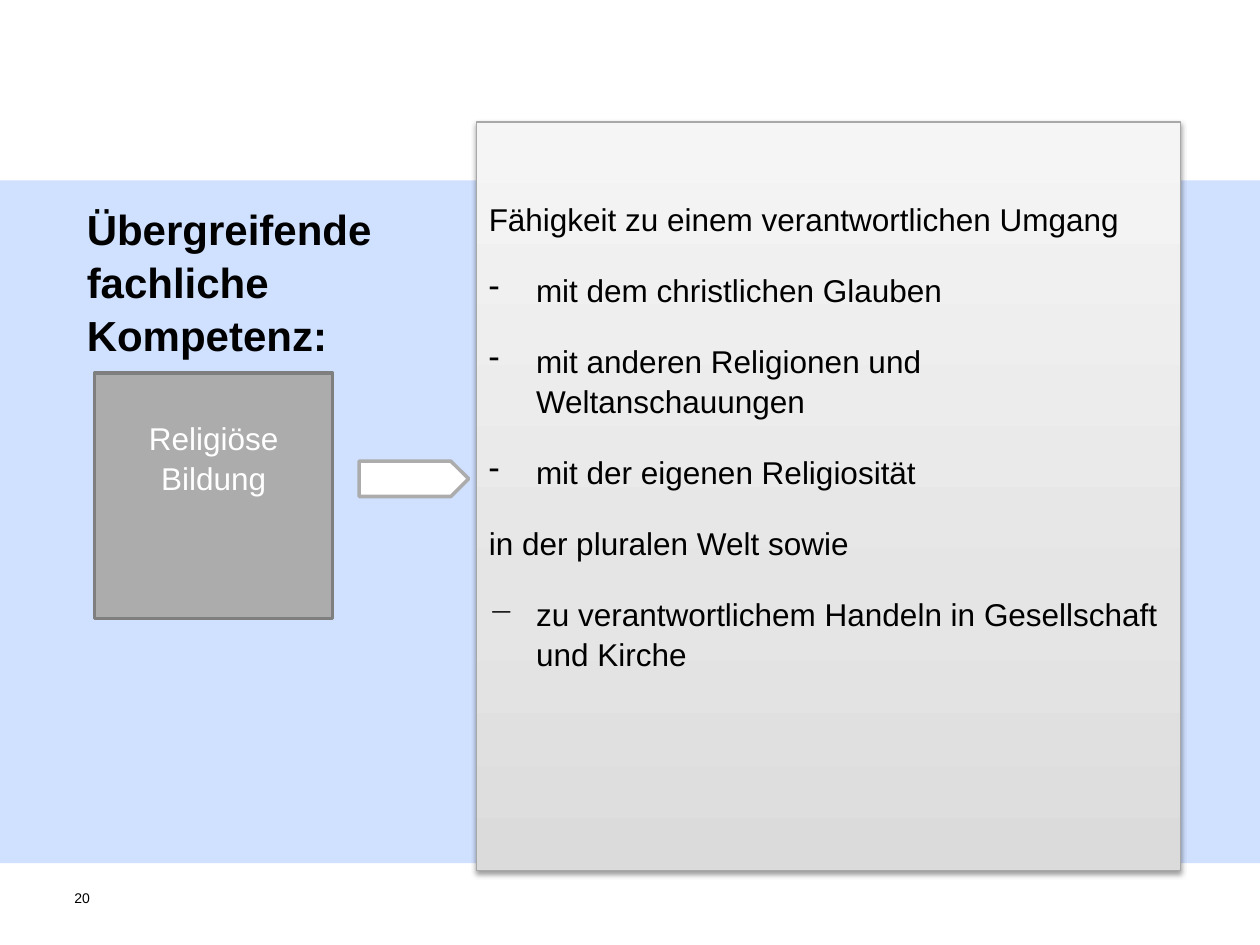
"""Build the slide on the overarching competence of religious education."""
from lxml import etree
from copy import deepcopy
from pptx import Presentation
from pptx.dml.color import RGBColor
from pptx.enum.shapes import MSO_SHAPE
from pptx.enum.text import MSO_ANCHOR, PP_ALIGN
from pptx.oxml.ns import qn
from pptx.util import Pt

RECT, PENTAGON = MSO_SHAPE.RECTANGLE, MSO_SHAPE.PENTAGON
TOP, LEFT, CENTER = MSO_ANCHOR.TOP, PP_ALIGN.LEFT, PP_ALIGN.CENTER

TITLE = [("", "Übergreifende fachliche Kompetenz:")]
TOPIC = [("", "Religiöse Bildung")]
ABILITIES = [
    ("", "Fähigkeit zu einem verantwortlichen Umgang"),
    ("-", "mit dem christlichen Glauben"),
    ("-", "mit anderen Religionen und Weltanschauungen"),
    ("-", "mit der eigenen Religiosität"),
    ("", "in der pluralen Welt sowie"),
    ("−", "zu verantwortlichem Handeln in Gesellschaft und Kirche"),
]
NUMBER = [("", "20")]

THEME = {
    "font": "Arial", "title": 24, "body": 18, "number": 8,
    "text": "000000", "inverse": "FFFFFF",
    "band": "6699FF", "band_alpha": 30,
    "topic": "ACACAC", "topic_line": "7F7F7F",
    "arrow": "FFFFFF", "arrow_line": "ACACAC",
    "panel": [(0, "DBDBDB"), (0.35, "E5E5E5"), (1, "F5F5F5")],
    "panel_line": "A8A8A8", "shadow": "000000", "shadow_alpha": 38,
}
BOXES = {
    "band": (0, 103, 720, 390.2),
    "title": (42.5, 111.6, 215.3, 94.3),
    "topic": (54, 213.1, 136.1, 140.4),
    "panel": (272.2, 69.8, 402.5, 427.7),
    "arrow": (205.2, 263.5, 62.6, 20.2),
    "number": (42.5, 508.3, 23, 26.6),
}
INSETS = (7.2, 3.6, 7.2, 3.6)
LINE_SPACING = 1.05
BODY_LINE = 21.7
PARA_GAP = 18
INDENT = Pt(27)


def rgb(name):
    return RGBColor.from_string(THEME[name])


def place(name):
    return [Pt(v) for v in BOXES[name]]


def add_box(s, name, kind=RECT, line=0):
    sp = s.shapes.add_shape(kind, *place(name))
    sp.shadow.inherit = False
    if isinstance(THEME[name], str):
        sp.fill.solid()
        sp.fill.fore_color.rgb = rgb(name)
    if line:
        sp.line.color.rgb = rgb(name + "_line")
        sp.line.width = Pt(line)
    else:
        sp.line.fill.background()
    return sp


def set_alpha(color, percent):
    etree.SubElement(color, qn("a:alpha"), val=str(percent * 1000))


def set_gradient(sp, stops):
    sp.fill.gradient()
    sp.fill.gradient_angle = 90
    stop_list = sp._element.spPr.find(".//" + qn("a:gsLst"))
    stop_list.append(deepcopy(stop_list[0]))
    for stop, (position, color) in zip(sp.fill.gradient_stops, stops):
        stop.position = position
        stop.color.rgb = RGBColor.from_string(color)


def set_shadow(sp):
    effects = sp._element.spPr.find(qn("a:effectLst"))
    shadow = etree.SubElement(
        effects, qn("a:outerShdw"), blurRad=str(Pt(3.1)), dist=str(Pt(1.6)),
        dir="5400000", rotWithShape="0")
    color = etree.SubElement(shadow, qn("a:srgbClr"), val=THEME["shadow"])
    set_alpha(color, THEME["shadow_alpha"])


def write(sp, items, size="body", color="text", bold=False, align=LEFT,
          insets=INSETS, spacing=LINE_SPACING, gap=0, drop=0):
    tf = sp.text_frame
    left, top, right, bottom = insets
    frame = {"word_wrap": True, "vertical_anchor": TOP,
             "margin_left": Pt(left), "margin_top": Pt(top + drop),
             "margin_right": Pt(right), "margin_bottom": Pt(bottom)}
    for key, value in frame.items():
        setattr(tf, key, value)
    font = {"name": THEME["font"], "size": Pt(THEME[size]), "bold": bold}
    layout = {"alignment": align, "line_spacing": spacing, "space_after": Pt(gap)}
    for i, (bullet, text) in enumerate(items):
        p = tf.add_paragraph() if i else tf.paragraphs[0]
        for key, value in layout.items():
            setattr(p, key, value)
        if bullet:
            pPr = p._p.get_or_add_pPr()
            pPr.set("marL", str(INDENT))
            pPr.set("indent", str(-INDENT))
            etree.SubElement(pPr, qn("a:buChar"), char=bullet)
        r = p.add_run()
        r.text = text
        for key, value in font.items():
            setattr(r.font, key, value)
        r.font.color.rgb = rgb(color)


def main():
    prs = Presentation()
    prs.slide_width, prs.slide_height = Pt(720), Pt(540)
    s = prs.slides.add_slide(prs.slide_layouts[6])

    band = add_box(s, "band")
    set_alpha(band._element.spPr.find(".//" + qn("a:srgbClr")), THEME["band_alpha"])

    write(s.shapes.add_textbox(*place("title")), TITLE, "title", bold=True)

    topic = add_box(s, "topic", line=2)
    write(topic, TOPIC, color="inverse", align=CENTER, drop=BODY_LINE)

    panel = add_box(s, "panel", line=0.75)
    set_gradient(panel, THEME["panel"])
    set_shadow(panel)
    write(panel, ABILITIES, gap=PARA_GAP, drop=BODY_LINE + PARA_GAP)

    add_box(s, "arrow", PENTAGON, line=2)

    write(s.shapes.add_textbox(*place("number")), NUMBER, "number",
          insets=(0, 0, 0, 0), spacing=1.0)
    prs.save("out.pptx")


if __name__ == "__main__":
    main()
